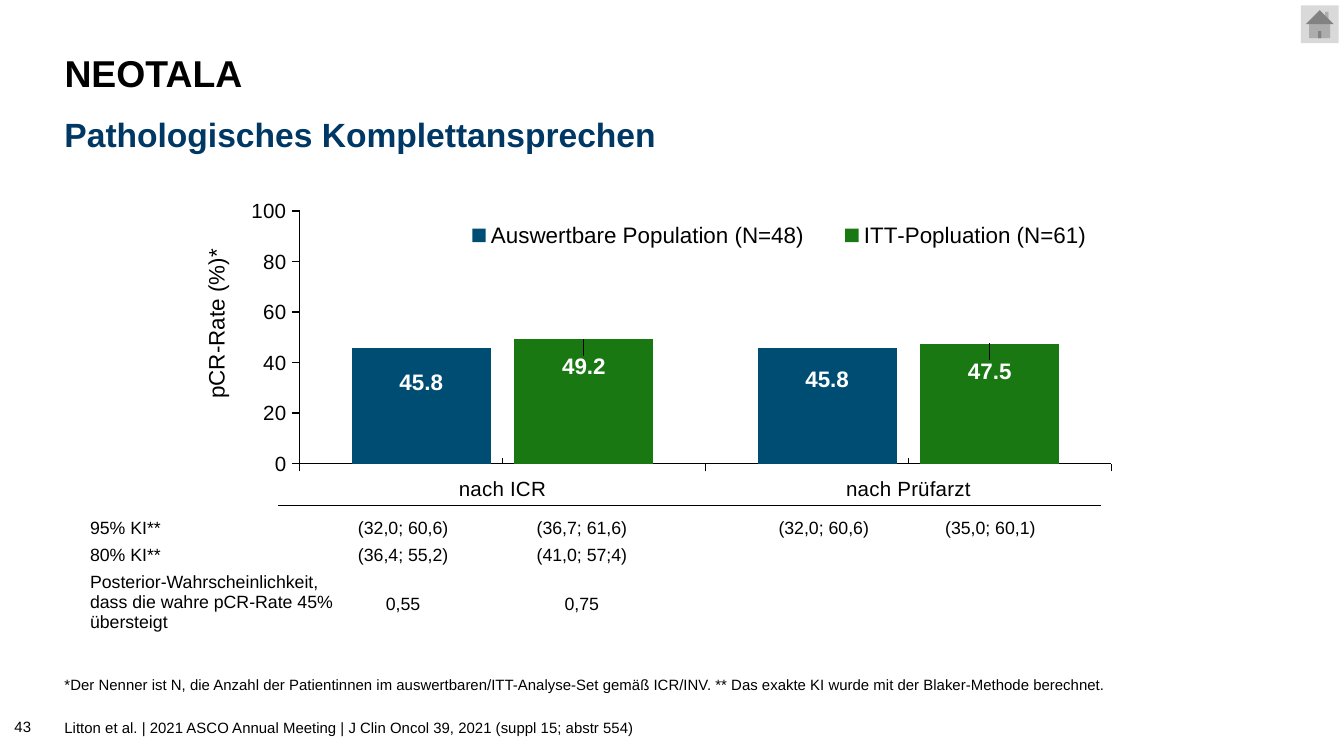
from lxml import etree
from pptx import Presentation
from pptx.chart.data import CategoryChartData
from pptx.dml.color import RGBColor
from pptx.enum.chart import XL_CHART_TYPE, XL_LABEL_POSITION, XL_LEGEND_POSITION, XL_TICK_MARK
from pptx.enum.shapes import MSO_CONNECTOR, MSO_SHAPE
from pptx.enum.text import MSO_ANCHOR, PP_ALIGN
from pptx.oxml import parse_xml
from pptx.oxml.ns import nsdecls, qn
from pptx.util import Inches, Pt

LEFT, CENTER = PP_ALIGN.LEFT, PP_ALIGN.CENTER
TOP, MIDDLE, BOTTOM = MSO_ANCHOR.TOP, MSO_ANCHOR.MIDDLE, MSO_ANCHOR.BOTTOM
OUTSIDE, INSIDE, NO_TICK = XL_TICK_MARK.OUTSIDE, XL_TICK_MARK.INSIDE, XL_TICK_MARK.NONE
FONT = "Arial"
COLORS = {"text": "000000", "subtitle": "003865", "evaluable": "004D74",
          "itt": "197812", "label": "FFFFFF", "button": "D9D9D9"}

CATEGORIES = ["nach ICR", "nach Prüfarzt"]
SERIES = [
    ("Auswertbare Population (N=48)", (45.8, 45.8), "evaluable", (0.05, 0.04), False),
    ("ITT-Popluation (N=61)", (49.2, 47.5), "itt", (0.03, 0.03), True),
]
COL_WIDTHS = [1.91, 0.94, 0.34, 1.04, 0.79, 0.98, 0.21, 1.08]
ROW_HEIGHTS = [0.17, 0.18, 0.39]
ROWS = [
    ["95% KI**", "(32,0; 60,6)", "", "(36,7; 61,6)", "", "(32,0; 60,6)", "", "(35,0; 60,1)"],
    ["80% KI**", "(36,4; 55,2)", "", "(41,0; 57;4)", "", "", "", ""],
    ["Posterior-Wahrscheinlichkeit, dass die wahre pCR-Rate 45% übersteigt",
     "0,55", "", "0,75", "", "", "", ""],
]


def rgb(name):
    return RGBColor.from_string(COLORS[name])


def style_font(font, size, color="text", bold=False):
    font.name, font.size, font.bold = FONT, Pt(size), bold
    font.color.rgb = rgb(color)


def write(tf, text, size=8, color="text", bold=False, align=LEFT, anchor=TOP,
          left=0.1, spacing=None):
    tf.word_wrap, tf.vertical_anchor = True, anchor
    tf.margin_left, tf.margin_right = Inches(left), Inches(0.1)
    tf.margin_top = tf.margin_bottom = Inches(0.05)
    p = tf.paragraphs[0]
    p.alignment, p.line_spacing = align, spacing
    r = p.add_run()
    r.text = text
    style_font(r.font, size, color, bold)


def add_text(s, box, text, **fmt):
    sp = s.shapes.add_textbox(*map(Inches, box))
    write(sp.text_frame, text, **fmt)
    return sp


def add_header(s, x, y, w):
    title = s.shapes.title
    title.left, title.top, title.width, title.height = map(Inches, (x, y, w, 0.52))
    write(title.text_frame, "NEOTALA", size=20, bold=True, anchor=MIDDLE, left=0, spacing=0.9)
    add_text(s, (x, y + 0.5, w, 0.39), "Pathologisches Komplettansprechen",
             size=18, color="subtitle", bold=True, anchor=MIDDLE, left=0)


def add_home_button(s, x, y, size):
    sp = s.shapes.add_shape(MSO_SHAPE.ACTION_BUTTON_HOME, *map(Inches, (x, y, size, size)))
    sp.shadow.inherit = False
    sp.fill.solid()
    sp.fill.fore_color.rgb = rgb("button")
    sp.line.fill.background()


def make_layout(x, y, w=None, h=None, inner=False):
    parts = ['<c:layoutTarget val="inner"/>'] if inner else []
    if w:
        parts += ['<c:xMode val="edge"/><c:yMode val="edge"/>']
    sizes = [("x", x), ("y", y), ("w", w), ("h", h)]
    parts += [f'<c:{tag} val="{value}"/>' for tag, value in sizes if value is not None]
    return parse_xml(f'<c:layout {nsdecls("c")}><c:manualLayout>{"".join(parts)}'
                     '</c:manualLayout></c:layout>')


def set_layout(parent, layout, after=None):
    for old in parent.findall(qn("c:layout")):
        parent.remove(old)
    if after is None:
        parent.insert(0, layout)
    else:
        parent.find(qn(after)).addnext(layout)


def format_series(ser, color, offsets, leaders):
    ser.format.fill.solid()
    ser.format.fill.fore_color.rgb = rgb(color)
    ser.invert_if_negative = False
    labels = ser.data_labels
    labels.show_value = True
    labels.position = XL_LABEL_POSITION.INSIDE_END
    style_font(labels.font, 12, "label", True)
    for i, dy in enumerate(offsets):
        label = ser.points[i].data_label
        style_font(label.font, 12, "label", True)
        label.position = XL_LABEL_POSITION.INSIDE_END
        dlbl = ser._element.dLbls.findall(qn("c:dLbl"))[i]
        set_layout(dlbl, make_layout(0, dy), after="c:idx")
    dlbls = ser._element.dLbls
    for old in dlbls.findall(qn("c:showLeaderLines")):
        dlbls.remove(old)
    etree.SubElement(dlbls, qn("c:showLeaderLines"), val=str(int(leaders)))


def add_rate_chart(s, x, y, w, h):
    data = CategoryChartData()
    data.categories = CATEGORIES
    for name, values, *_ in SERIES:
        data.add_series(name, values)
    chart = s.shapes.add_chart(XL_CHART_TYPE.COLUMN_CLUSTERED,
                               *map(Inches, (x, y, w, h)), data).chart
    style_font(chart.font, 10)
    chart.has_title = False
    plot = chart.plots[0]
    plot.vary_by_categories = False
    plot.gap_width, plot.overlap = 75, -17
    for ser, (_, _, color, offsets, leaders) in zip(plot.series, SERIES):
        format_series(ser, color, offsets, leaders)
    for axis, minor in ((chart.category_axis, INSIDE), (chart.value_axis, NO_TICK)):
        axis.has_major_gridlines = False
        axis.major_tick_mark, axis.minor_tick_mark = OUTSIDE, minor
        axis.format.line.color.rgb = rgb("text")
        axis.format.line.width = Pt(0.75)
        style_font(axis.tick_labels.font, 11)
    axis = chart.value_axis
    axis.minimum_scale, axis.maximum_scale, axis.major_unit = 0, 100, 20
    chart.has_legend = True
    legend = chart.legend
    legend.position, legend.include_in_layout = XL_LEGEND_POSITION.BOTTOM, False
    style_font(legend.font, 12)
    set_layout(legend._element, make_layout(0.23, 0.07, 0.76, 0.1), after="c:legendPos")
    set_layout(chart._chartSpace.chart.plotArea,
               make_layout(0.5 / w, 0.14 / h, 6.04 / w, 1.88 / h, inner=True))
    sp = add_text(s, (x - 1.02, y + 0.83, 1.79, 0.3), "pCR-Rate (%)*", size=12, align=CENTER)
    sp.rotation = 270


def add_rule(s, x, y, w):
    line = s.shapes.add_connector(MSO_CONNECTOR.STRAIGHT, *map(Inches, (x, y, x + w, y)))
    line.line.color.rgb = rgb("text")
    line.line.width = Pt(0.75)
    etree.SubElement(line._element.spPr, qn("a:effectLst"))


def add_interval_table(s, x, y, w, h):
    frame = s.shapes.add_table(len(ROWS), len(COL_WIDTHS), *map(Inches, (x, y, w, h)))
    table = frame.table
    table.first_row = table.horz_banding = False
    for col, width in zip(table.columns, COL_WIDTHS):
        col.width = Inches(width)
    for i, (row, height) in enumerate(zip(table.rows, ROW_HEIGHTS)):
        row.height = Inches(height)
        for j, (cell, text) in enumerate(zip(row.cells, ROWS[i])):
            cell.fill.background()
            if text:
                write(cell.text_frame, text, size=9.5, align=CENTER if j else LEFT)
            else:
                etree.SubElement(cell.text_frame.paragraphs[0]._p, qn("a:endParaRPr"), sz="950")
            cell.vertical_anchor = MIDDLE if i == 2 and j else TOP
            cell.margin_left = cell.margin_right = Inches(0.05)
            cell.margin_top = cell.margin_bottom = Inches(0.02)
    frame.height = Inches(h)


def add_footer(s, x, y, w):
    add_text(s, (x, y, w, 0.24),
             "*Der Nenner ist N, die Anzahl der Patientinnen im auswertbaren/ITT-Analyse-Set "
             "gemäß ICR/INV. ** Das exakte KI wurde mit der Blaker-Methode berechnet.", left=0)
    add_text(s, (x, y + 0.32, w, 0.25),
             "Litton et al. | 2021 ASCO Annual Meeting | J Clin Oncol 39, 2021 "
             "(suppl 15; abstr 554)", left=0)
    add_text(s, (x - 0.47, y + 0.29, 0.43, 0.25), "43", anchor=BOTTOM)


def main():
    prs = Presentation()
    prs.slide_width, prs.slide_height = Inches(10), Inches(10 * 9 / 16)
    s = prs.slides.add_slide(prs.slide_layouts[5])
    add_home_button(s, 9.68, 0.04, 0.28)
    add_header(s, 0.48, 0.3, 9.06)
    add_rate_chart(s, 1.73, 1.43, 6.67, 2.68)
    add_rule(s, 2.07, 3.76, 6.12)
    add_interval_table(s, 0.62, 3.84, 7.28, 0.91)
    add_footer(s, 0.48, 4.98, 9.06)
    prs.save("out.pptx")


if __name__ == "__main__":
    main()
